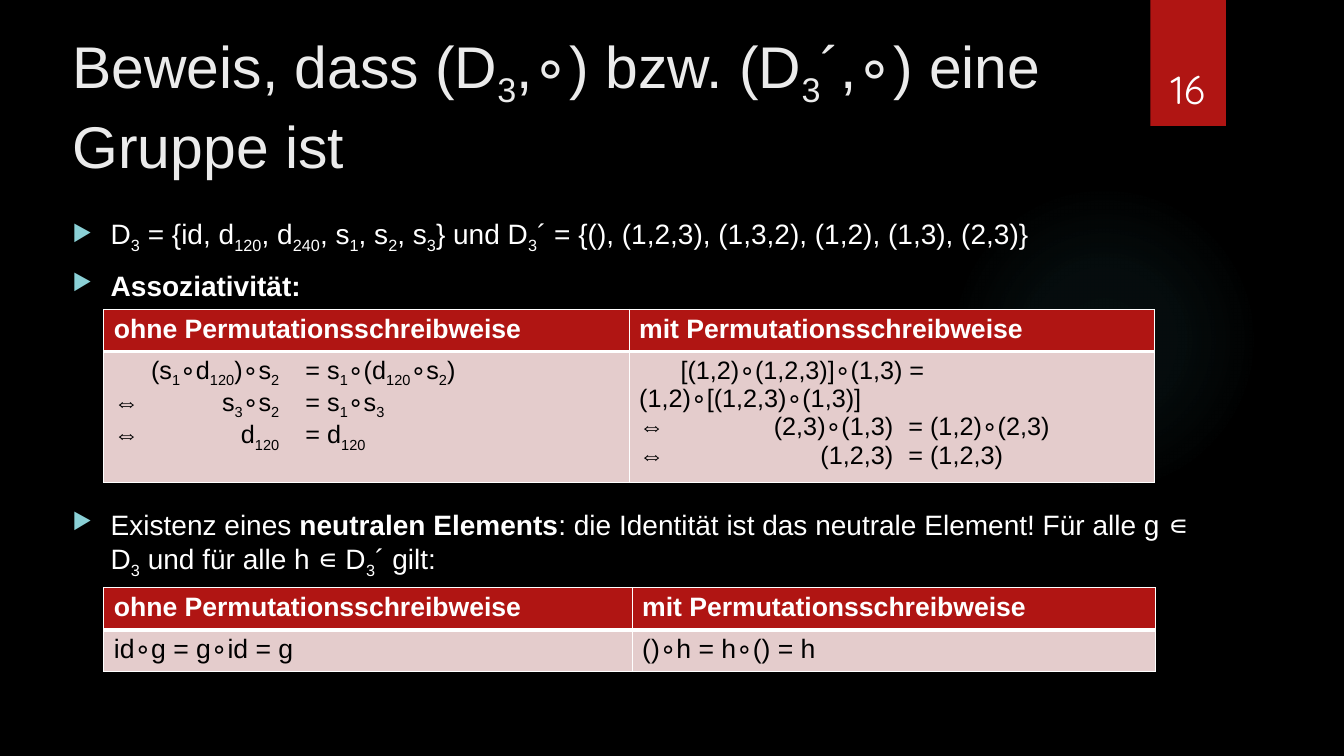
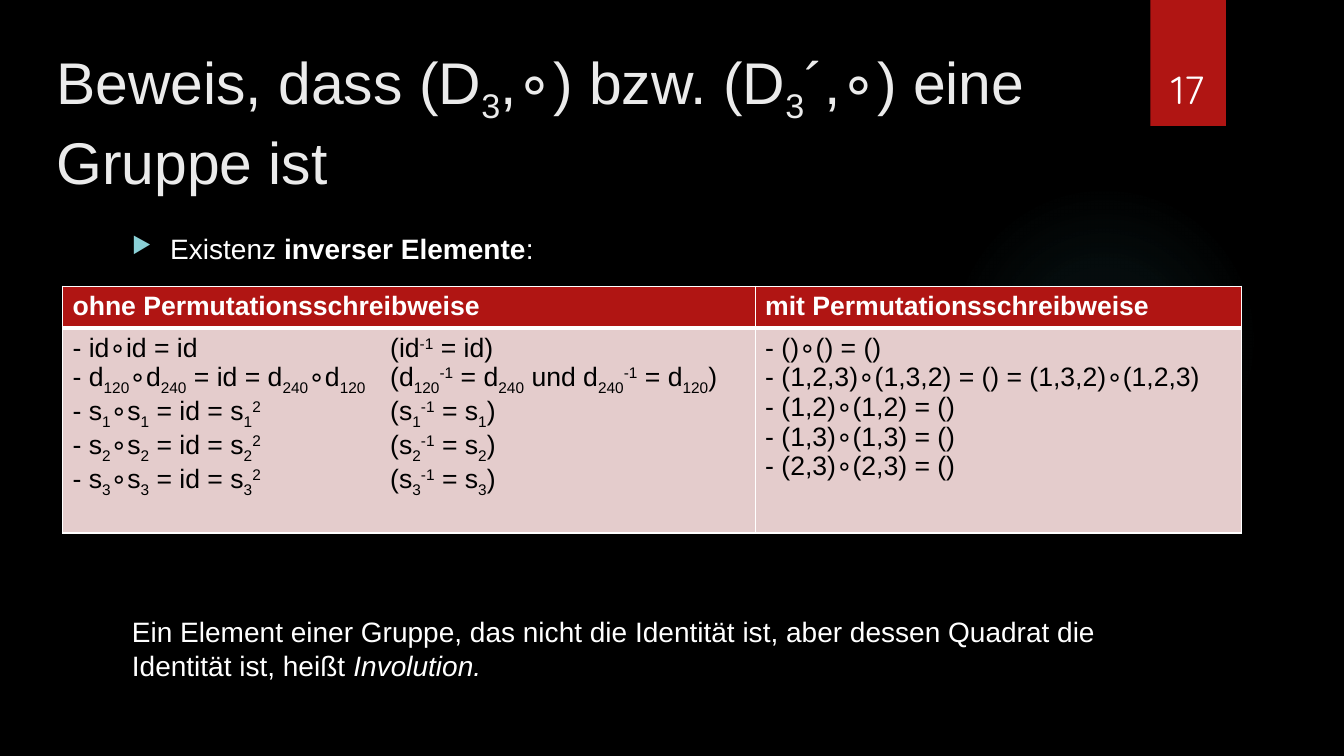
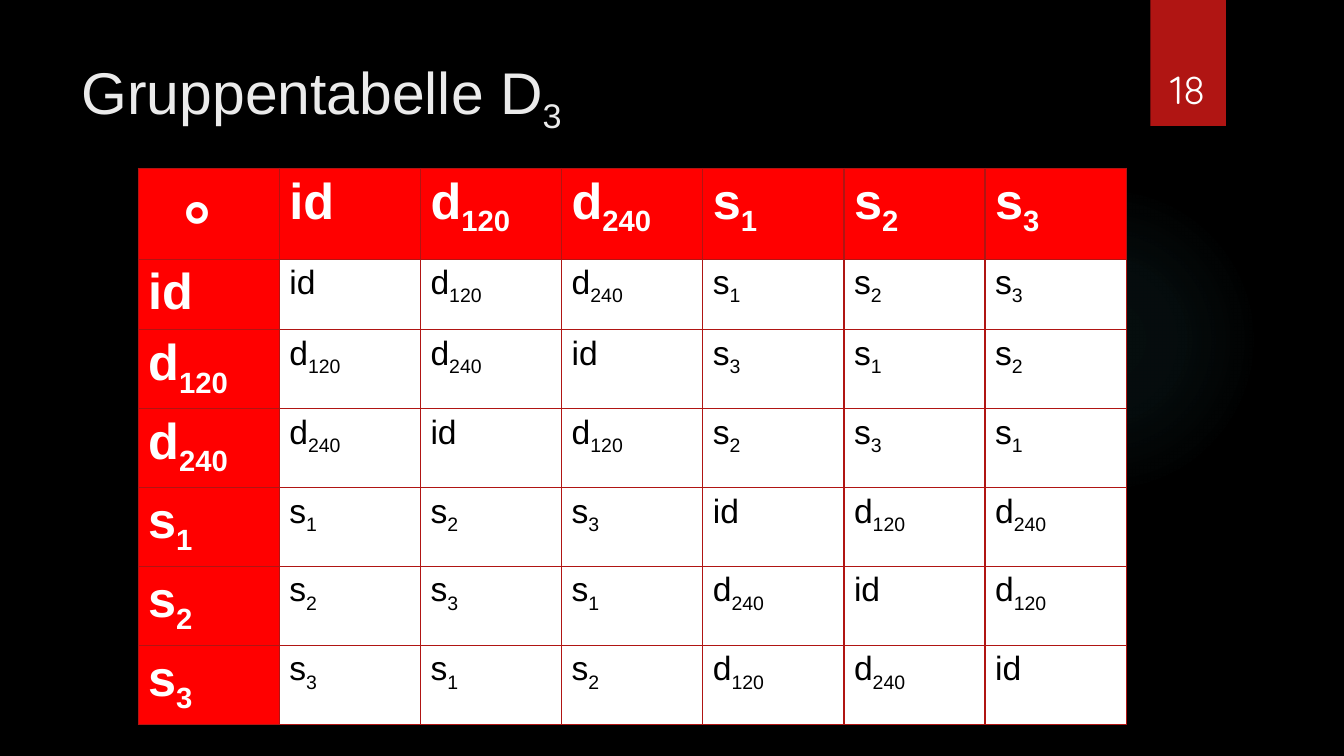
from collections import namedtuple
from itertools import groupby

from pptx import Presentation
from pptx.dml.color import RGBColor
from pptx.enum.shapes import MSO_SHAPE
from pptx.enum.text import MSO_ANCHOR, MSO_AUTO_SIZE, PP_ALIGN
from pptx.oxml import parse_xml
from pptx.oxml.ns import nsdecls
from pptx.util import Inches, Pt

BLACK = RGBColor(0x00, 0x00, 0x00)
WHITE = RGBColor(0xFF, 0xFF, 0xFF)
TITLE_GREY = RGBColor(0xEB, 0xEB, 0xEB)
BAND_RED = RGBColor(0xB0, 0x15, 0x13)
BRIGHT_RED = RGBColor(0xFF, 0x00, 0x00)
PALE_RED = RGBColor(0xE4, 0xCC, 0xCC)
BULLET_TEAL = RGBColor(0x8A, 0xD0, 0xD6)
GLOW_TEAL = RGBColor(0x50, 0xB9, 0xC1)

BODY_FONT = "Arial"
NUMBER_FONT = "Quicksand"
FIRST_NUMBER = 16
PROOF_TITLE = "Beweis, dass (D_3_,∘) bzw. (D_3_´,∘) eine Gruppe ist"
NOTATIONS = ("ohne Permutationsschreibweise", "mit Permutationsschreibweise")

# Marks that switch a style on and off: _sub_ ^super^ *bold* ~italic~
MARKS = "_^*~"

# tabs holds (position in inches, alignment) pairs
Line = namedtuple("Line", "text bullet indent tabs", defaults=(False, 0, ()))


def inches(values):
    return [Inches(value) for value in values]


def add_element(parent, xml, index=None):
    element = parse_xml(xml.replace(">", f" {nsdecls('a')}>", 1)
                        if "/>" not in xml.split(">", 1)[0] + ">"
                        else xml.replace("/>", f" {nsdecls('a')}/>", 1))
    parent.insert(len(parent) if index is None else index, element)


def add_runs(paragraph, text, size, color, bold=False, font=BODY_FONT):
    """Add one run for each stretch of text between style marks."""
    active = set()
    for is_mark, letters in groupby(text, lambda letter: letter in MARKS):
        if is_mark:
            active ^= set(letters)
            continue
        run = paragraph.add_run()
        run.text = "".join(letters)
        run.font.name = font
        run.font.size = Pt(size)
        run.font.color.rgb = color
        run.font.bold = bold or "*" in active
        run.font.italic = "~" in active
        if "_" in active:
            run.font._element.set("baseline", "-25000")
        elif "^" in active:
            run.font._element.set("baseline", "30000")


def format_paragraph(paragraph, line):
    properties = paragraph._p.get_or_add_pPr()
    if line.bullet:
        properties.set("marL", str(Inches(0.38)))
        properties.set("indent", str(-Inches(0.38)))
        add_element(properties, f'<a:buClr><a:srgbClr val="{BULLET_TEAL}"/></a:buClr>')
        add_element(properties, '<a:buSzPct val="80000"/>')
        add_element(properties, '<a:buChar char="▶"/>')
    elif line.indent:
        properties.set("marL", "0")
        properties.set("indent", str(Inches(line.indent)))
    if line.tabs:
        stops = "".join(f'<a:tab pos="{Inches(position)}" algn="{alignment}"/>'
                        for position, alignment in line.tabs)
        add_element(properties, f"<a:tabLst>{stops}</a:tabLst>")


def fill_text(text_frame, lines, size, color, bold=False, font=BODY_FONT, gap=0):
    """Write each line as a paragraph; gap is the space between them in points."""
    text_frame.word_wrap = True
    for index, line in enumerate(lines):
        paragraph = text_frame.add_paragraph() if index else text_frame.paragraphs[0]
        format_paragraph(paragraph, line)
        if index and gap:
            paragraph.space_before = Pt(gap)
        add_runs(paragraph, line.text, size, color, bold, font)


def add_body_text(slide, box, lines):
    text_frame = slide.shapes.add_textbox(*inches(box)).text_frame
    fill_text(text_frame, lines, 20, WHITE, gap=10)


def add_glow(slide, box):
    glow = slide.shapes.add_shape(MSO_SHAPE.OVAL, *inches(box))
    glow.shadow.inherit = False
    glow.line.fill.background()
    glow.fill.gradient()
    gradient = glow.fill._xPr.find(".//{*}gradFill")
    for child in list(gradient):
        gradient.remove(child)
    stops = "".join(f'<a:gs pos="{position}000"><a:srgbClr val="{GLOW_TEAL}">'
                    f'<a:alpha val="{alpha}000"/></a:srgbClr></a:gs>'
                    for position, alpha in ((0, 7), (36, 6), (69, 0)))
    add_element(gradient, f"<a:gsLst>{stops}</a:gsLst>")
    add_element(gradient, '<a:path path="circle"><a:fillToRect l="50000" t="50000" '
                          'r="50000" b="50000"/></a:path>')


def add_number_band(slide, number):
    band = slide.shapes.add_shape(MSO_SHAPE.RECTANGLE, *inches((11.41, 0, 0.75, 1.25)))
    band.shadow.inherit = False
    band.fill.solid()
    band.fill.fore_color.rgb = BAND_RED
    band.line.fill.background()
    label = slide.shapes.add_textbox(*inches((11.32, 0.32, 0.92, 0.84))).text_frame
    label.vertical_anchor = MSO_ANCHOR.BOTTOM
    fill_text(label, [Line(str(number))], 28, WHITE, font=NUMBER_FONT)
    label.paragraphs[0].alignment = PP_ALIGN.CENTER


def add_titled_slide(presentation, title, title_box):
    """Add a slide with the shared decoration, number and title."""
    slide = presentation.slides.add_slide(presentation.slide_layouts[5])
    add_glow(slide, (9.41, 1.83, 3.08, 3.08))
    add_number_band(slide, FIRST_NUMBER + len(presentation.slides) - 1)
    placeholder = slide.shapes.title
    placeholder.left, placeholder.top, placeholder.width, placeholder.height = inches(title_box)
    text_frame = placeholder.text_frame
    text_frame.auto_size = MSO_AUTO_SIZE.NONE
    text_frame.vertical_anchor = MSO_ANCHOR.TOP
    fill_text(text_frame, [Line(title)], 42, TITLE_GREY)
    text_frame.paragraphs[0].alignment = PP_ALIGN.LEFT
    text_frame.paragraphs[0].line_spacing = 1.0
    return slide


def add_plain_table(slide, left, top, widths, heights):
    frame = slide.shapes.add_table(len(heights), len(widths), *inches(
        (left, top, sum(widths), sum(heights))))
    table = frame.table
    table.horz_banding = False
    for column, width in zip(table.columns, widths):
        column.width = Inches(width)
    for row, height in zip(table.rows, heights):
        row.height = Inches(height)
    return table


def format_cell(cell, fill, border, top=1, bottom=1):
    """Fill a cell and draw its borders; top and bottom are widths in points."""
    cell.fill.solid()
    cell.fill.fore_color.rgb = fill
    properties = cell._tc.get_or_add_tcPr()
    sides = (("L", 1), ("R", 1), ("T", top), ("B", bottom))
    for index, (side, width) in enumerate(sides):
        add_element(properties,
                    f'<a:ln{side} w="{Pt(width)}"><a:solidFill><a:srgbClr val="{border}"/>'
                    f"</a:solidFill></a:ln{side}>", index)


def add_notation_table(slide, left, top, widths, heights, columns, size=19):
    """Set the plain notation beside the permutation notation."""
    table = add_plain_table(slide, left, top, widths, heights)
    for index, (heading, lines) in enumerate(zip(NOTATIONS, columns)):
        head, body = table.cell(0, index), table.cell(1, index)
        format_cell(head, BAND_RED, WHITE, bottom=3)
        fill_text(head.text_frame, [Line(heading)], 19, WHITE, bold=True)
        format_cell(body, PALE_RED, WHITE, top=3)
        fill_text(body.text_frame, lines, size, BLACK)


def add_group_table(slide, left, top):
    rotations = ("id", "d_120_", "d_240_")
    reflections = ("s_1_", "s_2_", "s_3_")
    elements = rotations + reflections

    def compose(first, second):
        first_flips, i = divmod(first, 3)
        second_flips, j = divmod(second, 3)
        family = rotations if first_flips == second_flips else reflections
        return family[(j - i if second_flips else i + j) % 3]

    table = add_plain_table(slide, left, top, [1.4] * 7, [0.85, 0.69] + [0.74] * 5)
    table.first_col = True
    corner = table.cell(0, 0)
    format_cell(corner, BRIGHT_RED, BAND_RED)
    fill_text(corner.text_frame, [Line("∘", indent=0.28)], 48, WHITE, bold=True)
    for index, element in enumerate(elements):
        for cell in (table.cell(0, index + 1), table.cell(index + 1, 0)):
            format_cell(cell, BRIGHT_RED, BAND_RED)
            fill_text(cell.text_frame, [Line(element)], 36, WHITE, bold=True)
        for other in range(len(elements)):
            cell = table.cell(index + 1, other + 1)
            format_cell(cell, WHITE, BAND_RED)
            fill_text(cell.text_frame, [Line(compose(index, other))], 24, BLACK)


def build_associativity_slide(presentation):
    slide = add_titled_slide(presentation, PROOF_TITLE, (0.62, 0.24, 11.1, 1.48))
    add_body_text(slide, (0.62, 2.1, 11.4, 0.95), [
        Line("D_3_ = {id, d_120_, d_240_, s_1_, s_2_, s_3_} und "
             "D_3_´ = {(), (1,2,3), (1,3,2), (1,2), (1,3), (2,3)}", bullet=True),
        Line("*Assoziativität:*", bullet=True),
    ])
    plain_tabs = ((1.64, "r"), (1.9, "l"))
    permutation_tabs = ((2.52, "r"), (2.67, "l"))
    add_notation_table(slide, 1.03, 3.07, (5.21, 5.21), (0.4, 1.21), (
        [Line("\t(s_1_∘d_120_)∘s_2_\t= s_1_∘(d_120_∘s_2_)", tabs=plain_tabs),
         Line("⇔\ts_3_∘s_2_\t= s_1_∘s_3_", tabs=plain_tabs),
         Line("⇔\td_120_\t= d_120_", tabs=plain_tabs)],
        [Line("[(1,2)∘(1,2,3)]∘(1,3) = (1,2)∘[(1,2,3)∘(1,3)]", indent=0.41),
         Line("⇔\t(2,3)∘(1,3)\t= (1,2)∘(2,3)", tabs=permutation_tabs),
         Line("⇔\t(1,2,3)\t= (1,2,3)", tabs=permutation_tabs)],
    ), size=18)
    add_body_text(slide, (0.62, 4.99, 11.4, 0.8), [
        Line("Existenz eines *neutralen Elements*: die Identität ist das neutrale "
             "Element! Für alle g ∊ D_3_ und für alle h ∊ D_3_´ gilt:", bullet=True)])
    add_notation_table(slide, 1.03, 5.83, (5.24, 5.19), (0.41, 0.41), (
        [Line("id∘g = g∘id = g")], [Line("()∘h = h∘() = h")]))


def build_inverse_slide(presentation):
    slide = add_titled_slide(presentation, PROOF_TITLE, (0.46, 0.4, 11.19, 1.6))
    add_body_text(slide, (1.21, 2.25, 9.78, 0.45),
                  [Line("Existenz *inverser Elemente*:", bullet=True)])
    plain = ["- id∘id = id\t(id^-1^ = id)",
             "- d_120_∘d_240_ = id = d_240_∘d_120_\t"
             "(d_120_^-1^ = d_240_ und d_240_^-1^ = d_120_)"]
    plain += [f"- s_{n}_∘s_{n}_ = id = s_{n}_^2^\t(s_{n}_^-1^ = s_{n}_)" for n in (1, 2, 3)]
    permutations = ["- ()∘() = ()", "- (1,2,3)∘(1,3,2) = () = (1,3,2)∘(1,2,3)"]
    permutations += [f"- {swap}∘{swap} = ()" for swap in ("(1,2)", "(1,3)", "(2,3)")]
    add_notation_table(slide, 0.62, 2.84, (6.87, 4.82), (0.39, 2.03), (
        [Line(text, tabs=((3.15, "l"),)) for text in plain],
        [Line(text) for text in permutations]))
    add_body_text(slide, (1.21, 6.05, 9.78, 0.8), [
        Line("Ein Element einer Gruppe, das nicht die Identität ist, aber dessen "
             "Quadrat die Identität ist, heißt ~Involution.~")])


def build_group_table_slide(presentation):
    slide = add_titled_slide(presentation, "Gruppentabelle D_3_", (0.71, 0.5, 10.29, 1.1))
    add_group_table(slide, 1.37, 1.67)


def main():
    presentation = Presentation()
    presentation.slide_width, presentation.slide_height = inches((13.33, 7.5))
    background = presentation.slide_master.background.fill
    background.solid()
    background.fore_color.rgb = BLACK
    build_associativity_slide(presentation)
    build_inverse_slide(presentation)
    build_group_table_slide(presentation)
    presentation.save("out.pptx")


if __name__ == "__main__":
    main()
